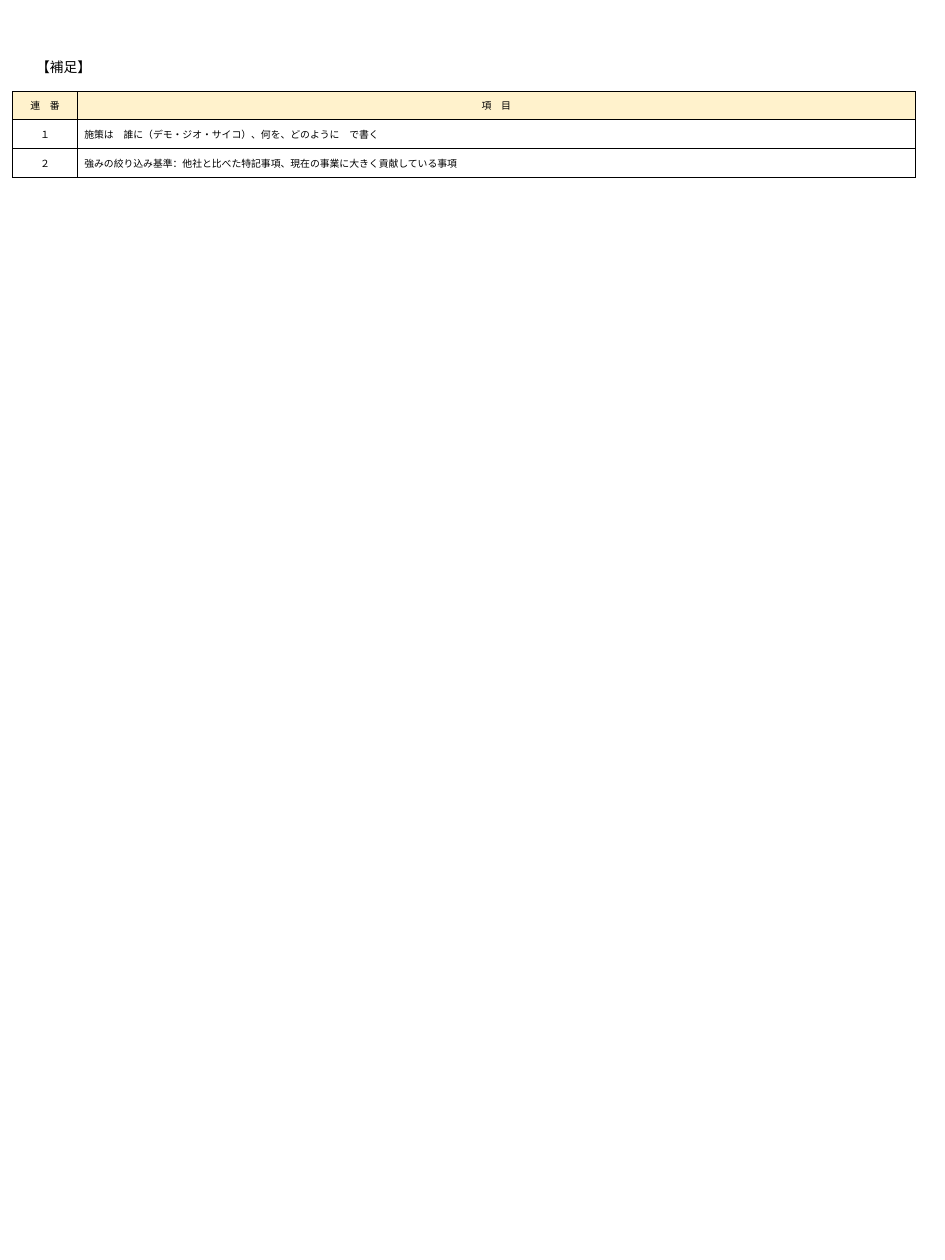
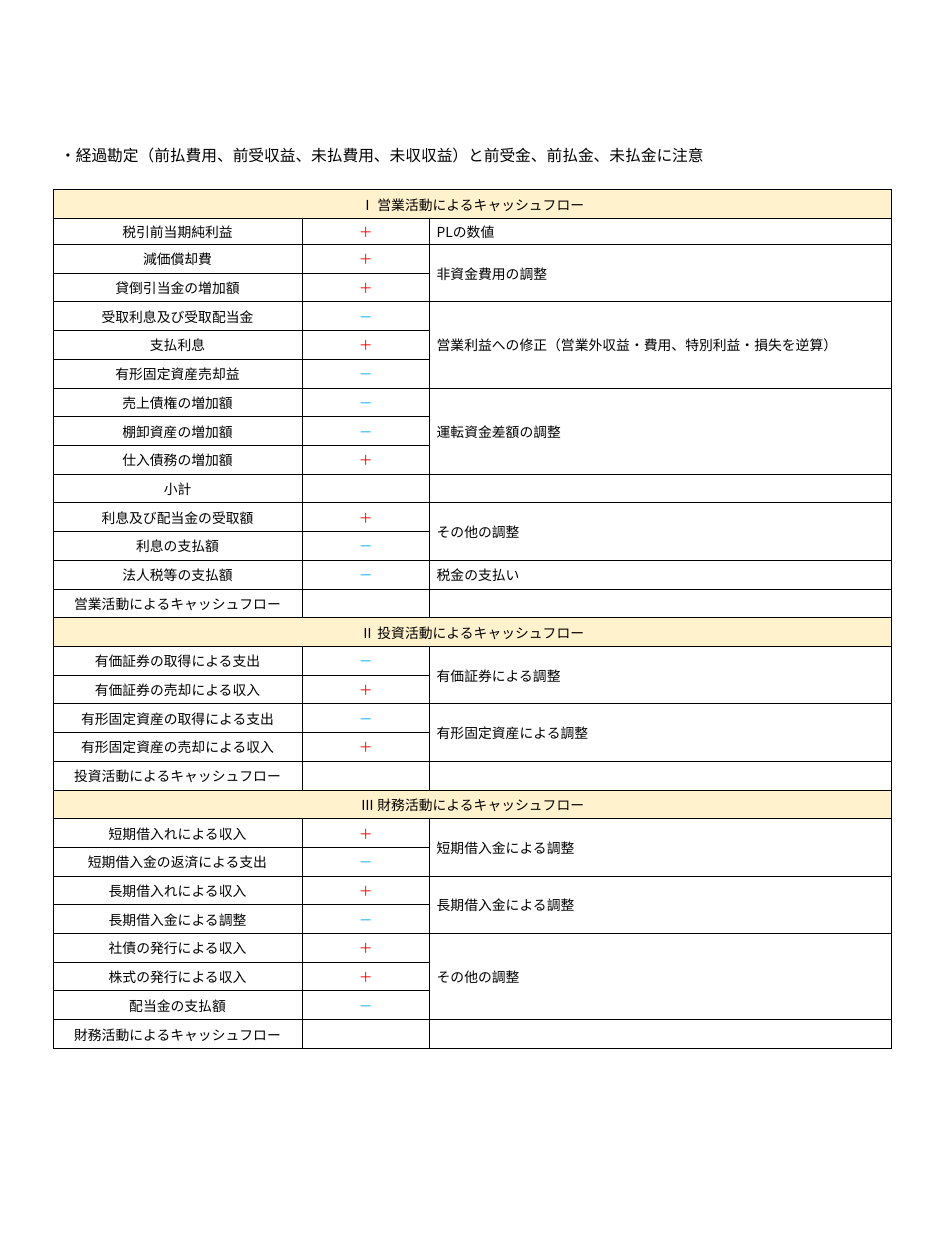
from dataclasses import dataclass

from lxml import etree
from pptx import Presentation
from pptx.dml.color import RGBColor
from pptx.enum.text import MSO_ANCHOR, MSO_AUTO_SIZE, PP_ALIGN
from pptx.oxml.ns import qn
from pptx.util import Inches, Pt

LEFT, CENTER = PP_ALIGN.LEFT, PP_ALIGN.CENTER
MIDDLE = MSO_ANCHOR.MIDDLE
GROW = MSO_AUTO_SIZE.SHAPE_TO_FIT_TEXT


@dataclass(frozen=True)
class Theme:
    ink: str = "000000"
    paper: str = "FFFFFF"
    header: str = "FFF2CC"
    plus: str = "FF0000"
    minus: str = "00B0F0"
    font: str = "Noto Sans CJK JP"
    title_font: str = "Calibri"
    small: int = 10
    body: int = 14
    note: int = 16
    border: int = 1


THEME = Theme()
SIGN_COLORS = {"＋": THEME.plus, "－": THEME.minus}

SUPPLEMENTS = [
    "施策は　誰に（デモ・ジオ・サイコ）、何を、どのように　で書く",
    "強みの絞り込み基準：他社と比べた特記事項、現在の事業に大きく貢献している事項",
]

CASH_FLOWS = [
    ("Ⅰ 営業活動によるキャッシュフロー", [
        ("PLの数値", [("税引前当期純利益", "＋")]),
        ("非資金費用の調整", [("減価償却費", "＋"), ("貸倒引当金の増加額", "＋")]),
        ("営業利益への修正（営業外収益・費用、特別利益・損失を逆算）", [
            ("受取利息及び受取配当金", "－"),
            ("支払利息", "＋"),
            ("有形固定資産売却益", "－"),
        ]),
        ("運転資金差額の調整", [
            ("売上債権の増加額", "－"),
            ("棚卸資産の増加額", "－"),
            ("仕入債務の増加額", "＋"),
        ]),
        ("", [("小計", "")]),
        ("その他の調整", [("利息及び配当金の受取額", "＋"), ("利息の支払額", "－")]),
        ("税金の支払い", [("法人税等の支払額", "－")]),
        ("", [("営業活動によるキャッシュフロー", "")]),
    ]),
    ("Ⅱ 投資活動によるキャッシュフロー", [
        ("有価証券による調整", [
            ("有価証券の取得による支出", "－"),
            ("有価証券の売却による収入", "＋"),
        ]),
        ("有形固定資産による調整", [
            ("有形固定資産の取得による支出", "－"),
            ("有形固定資産の売却による収入", "＋"),
        ]),
        ("", [("投資活動によるキャッシュフロー", "")]),
    ]),
    ("Ⅲ 財務活動によるキャッシュフロー", [
        ("短期借入金による調整", [
            ("短期借入れによる収入", "＋"),
            ("短期借入金の返済による支出", "－"),
        ]),
        ("長期借入金による調整", [
            ("長期借入れによる収入", "＋"),
            ("長期借入金による調整", "－"),
        ]),
        ("その他の調整", [
            ("社債の発行による収入", "＋"),
            ("株式の発行による収入", "＋"),
            ("配当金の支払額", "－"),
        ]),
        ("", [("財務活動によるキャッシュフロー", "")]),
    ]),
]


class Deck:
    """Holds the theme and the current slide, and draws each kind of element."""

    def __init__(self, theme):
        self.theme = theme
        self.prs = Presentation()
        self.prs.slide_width = Inches(13.33)
        self.prs.slide_height = Inches(17.78)
        self.slide = None

    def new_slide(self):
        self.slide = self.prs.slides.add_slide(self.prs.slide_layouts[6])

    def run(self, p, text, size, color=None, font=None):
        r = p.add_run()
        r.text = text
        r.font.size = Pt(size)
        r.font.name = font or self.theme.font
        r.font.color.rgb = RGBColor.from_string(color or self.theme.ink)
        ea = etree.Element(qn("a:ea"), typeface=self.theme.font)
        r.font._element.find(qn("a:latin")).addnext(ea)

    def text(self, x, y, w, h, text, size, font=None):
        sp = self.slide.shapes.add_textbox(Inches(x), Inches(y), Inches(w), Inches(h))
        tf = sp.text_frame
        tf.word_wrap = True
        tf.auto_size = GROW
        self.run(tf.paragraphs[0], text, size, font=font)

    def table(self, x, y, h, widths, first_heights, row_count):
        frame = self.slide.shapes.add_table(
            row_count, len(widths), Inches(x), Inches(y), Inches(sum(widths)), Inches(h))
        tbl = frame.table
        tbl.first_row = tbl.horz_banding = False
        for col, width in zip(tbl.columns, widths):
            col.width = Inches(width)
        rest = (h - sum(first_heights)) / (row_count - len(first_heights))
        heights = first_heights + [rest] * (row_count - len(first_heights))
        for row, height in zip(tbl.rows, heights):
            row.height = Inches(height)
        for cell in tbl.iter_cells():
            self.border(cell)
            self.fill(cell, self.theme.paper)
            cell.vertical_anchor = MIDDLE
        return tbl

    def border(self, cell):
        tc_pr = cell._tc.get_or_add_tcPr()
        for side in ("a:lnL", "a:lnR", "a:lnT", "a:lnB"):
            ln = etree.SubElement(tc_pr, qn(side), w=str(Pt(self.theme.border)))
            solid = etree.SubElement(ln, qn("a:solidFill"))
            etree.SubElement(solid, qn("a:srgbClr"), val=self.theme.ink)

    def fill(self, cell, color):
        cell.fill.solid()
        cell.fill.fore_color.rgb = RGBColor.from_string(color)

    def cell(self, cell, text, size, align=CENTER, color=None):
        if text:
            p = cell.text_frame.paragraphs[0]
            p.alignment = align
            self.run(p, text, size, color)

    def header(self, cell, text, size):
        self.fill(cell, self.theme.header)
        self.cell(cell, text, size)


def supplement_slide(deck):
    deck.new_slide()
    small = THEME.small
    tbl = deck.table(0.18, 1.29, 1.21, [0.91, 11.82], [0.4], len(SUPPLEMENTS) + 1)
    for col, title in enumerate(("連　番", "項　目")):
        deck.header(tbl.cell(0, col), title, small)
    for row, (number, item) in enumerate(zip("１２", SUPPLEMENTS), 1):
        deck.cell(tbl.cell(row, 0), number, small)
        deck.cell(tbl.cell(row, 1), item, small, LEFT)
    deck.text(0.41, 0.78, 4.72, 0.34, "【補足】", THEME.body, THEME.title_font)


def cash_flow_slide(deck):
    deck.new_slide()
    body = THEME.body
    row_count = sum(1 + sum(len(items) for _, items in groups) for _, groups in CASH_FLOWS)
    tbl = deck.table(0.75, 2.68, 12.12, [3.51, 1.8, 6.52], [0.4, 0.37], row_count)
    row = 0
    for title, groups in CASH_FLOWS:
        tbl.cell(row, 0).merge(tbl.cell(row, 2))
        deck.header(tbl.cell(row, 0), title, body)
        row += 1
        for note, items in groups:
            if len(items) > 1:
                tbl.cell(row, 2).merge(tbl.cell(row + len(items) - 1, 2))
            deck.cell(tbl.cell(row, 2), note, body, LEFT)
            for label, sign in items:
                deck.cell(tbl.cell(row, 0), label, body)
                deck.cell(tbl.cell(row, 1), sign, body, color=SIGN_COLORS.get(sign))
                row += 1
    deck.text(0.75, 2.01, 12.06, 0.37,
              "・経過勘定（前払費用、前受収益、未払費用、未収収益）と前受金、前払金、未払金に注意",
              THEME.note)


def main():
    deck = Deck(THEME)
    supplement_slide(deck)
    cash_flow_slide(deck)
    deck.prs.save("out.pptx")


if __name__ == "__main__":
    main()
